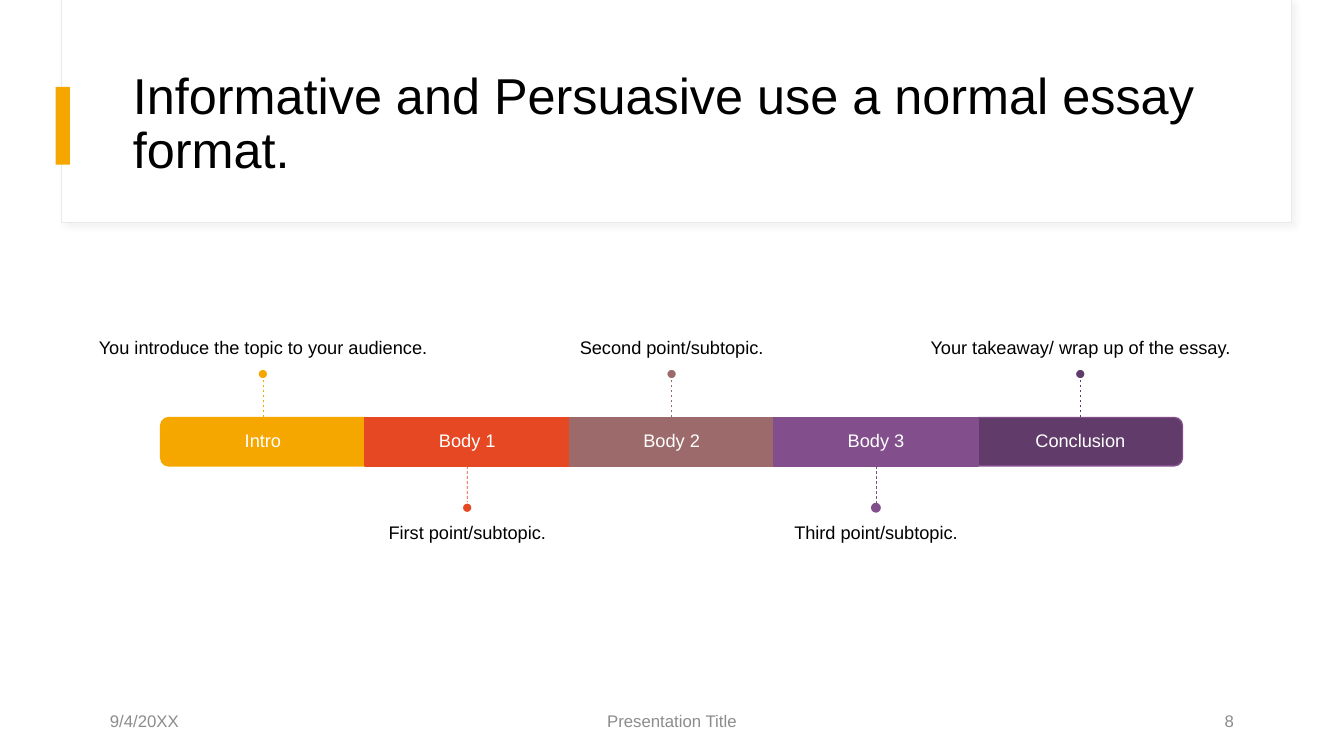
from lxml.etree import SubElement
from pptx import Presentation
from pptx.dml.color import RGBColor
from pptx.enum.dml import MSO_LINE_DASH_STYLE as Dash
from pptx.enum.shapes import MSO_CONNECTOR as Connector, MSO_SHAPE as Shape
from pptx.enum.text import MSO_ANCHOR as Anchor, MSO_AUTO_SIZE as AutoSize, PP_ALIGN as Align
from pptx.oxml.ns import qn
from pptx.util import Cm, Pt

COLORS = {
    "white": "FFFFFF", "black": "000000", "gray": "8C8C8C",
    "frame": "E9E9E9", "shadow": "D9D9D9",
    "amber": "F5A700", "red": "E64823", "rose": "9C6A6A",
    "violet": "824F8C", "plum": "613B69",
}
STEPS = [
    ("Intro", "You introduce the topic to your audience.", "amber", "amber", "white"),
    ("Body 1", "First point/subtopic.", "red", "red", "white"),
    ("Body 2", "Second point/subtopic.", "rose", "rose", "white"),
    ("Body 3", "Third point/subtopic.", "violet", "violet", None),
    ("Conclusion", "Your takeaway/ wrap up of the essay.", "plum", "violet", "white"),
]
BAR_LEFT, BAR_TOP, STEP_WIDTH, BAR_HEIGHT = 4.05, 10.52, 5.15, 1.22
DOT_SIZE, CAPTION_WIDTH, CAPTION_HEIGHT = 0.25, 8.58, 4.24
UPPER_DOT, LOWER_DOT = 9.3, 12.67


def write_text(frame, text, size=13, color="black", align=Align.CENTER,
               anchor=Anchor.MIDDLE, spacing=0.9, insets=(0.25, 0.13, 0.25, 0.13)):
    frame.word_wrap = True
    frame.auto_size = AutoSize.NONE
    frame.vertical_anchor = anchor
    (frame.margin_left, frame.margin_top,
     frame.margin_right, frame.margin_bottom) = map(Cm, insets)
    para = frame.paragraphs[0]
    para.alignment = align
    para.line_spacing = spacing
    span = para.add_run()
    span.text = text
    span.font.name = "Arial"
    span.font.size = Pt(size)
    span.font.color.rgb = RGBColor.from_string(COLORS[color])


class SlideBuilder:
    def __init__(self, page):
        self.page = page

    def shape(self, kind, left, top, width, height, fill, line=None, weight=1, rotation=0):
        item = self.page.shapes.add_shape(kind, Cm(left), Cm(top), Cm(width), Cm(height))
        item.shadow.inherit = False
        item.rotation = rotation
        item.fill.solid()
        item.fill.fore_color.rgb = RGBColor.from_string(COLORS[fill])
        if line:
            item.line.color.rgb = RGBColor.from_string(COLORS[line])
            item.line.width = Pt(weight)
        else:
            item.line.fill.background()
        return item

    def frame(self, left, top, width, height):
        item = self.shape(Shape.RECTANGLE, left, top, width, height, "white", "frame", 0.75)
        effects = item.element.spPr.find(qn("a:effectLst"))
        shadow = SubElement(effects, qn("a:outerShdw"), blurRad=str(Pt(4)),
                            dist=str(Pt(3)), dir="2700000", algn="tl", rotWithShape="0")
        tint = SubElement(shadow, qn("a:srgbClr"), val=COLORS["shadow"])
        SubElement(tint, qn("a:alpha"), val="30000")

    def title(self, text, left, top, width, height):
        box = self.page.shapes.title
        box.left, box.top, box.width, box.height = map(Cm, (left, top, width, height))
        self.page.shapes.element.append(box.element)
        write_text(box.text_frame, text, size=36, align=Align.LEFT)

    def text(self, text, left, top, width, height, **style):
        box = self.page.shapes.add_textbox(Cm(left), Cm(top), Cm(width), Cm(height))
        write_text(box.text_frame, text, **style)

    def leader(self, x, start, end, color):
        line = self.page.shapes.add_connector(
            Connector.STRAIGHT, Cm(x), Cm(start), Cm(x), Cm(end))
        line.line.color.rgb = RGBColor.from_string(COLORS[color])
        line.line.width = Pt(0.5)
        line.line.dash_style = Dash.DASH
        SubElement(line.element.spPr, qn("a:effectLst"))
        return line

    def segment(self, index, label, color, outline):
        left = BAR_LEFT + index * STEP_WIDTH
        if index in (0, len(STEPS) - 1):
            shift = (STEP_WIDTH - BAR_HEIGHT) / 2
            block = self.shape(Shape.ROUND_2_SAME_RECTANGLE, left + shift, BAR_TOP - shift,
                               BAR_HEIGHT, STEP_WIDTH, color, outline,
                               rotation=90 if index else 270)
        else:
            block = self.shape(Shape.RECTANGLE, left, BAR_TOP, STEP_WIDTH, BAR_HEIGHT,
                               color, outline)
        self.text(label, left, BAR_TOP, STEP_WIDTH, BAR_HEIGHT, color="white",
                  insets=(0.28,) * 4)
        return block

    def step(self, index, label, caption, color, outline, dot_line):
        block = self.segment(index, label, color, outline)
        center = BAR_LEFT + (index + 0.5) * STEP_WIDTH
        above = index % 2 == 0
        if above:
            dot_top, start, end = UPPER_DOT, BAR_TOP, UPPER_DOT + DOT_SIZE
            caption_top, anchor, insets = 5.08, Anchor.BOTTOM, (0, 0, 0, 0.28)
        else:
            dot_top, start, end = LOWER_DOT, BAR_TOP + BAR_HEIGHT, LOWER_DOT
            caption_top, anchor, insets = 12.93, Anchor.TOP, (0, 0.28, 0, 0)
        self.text(caption, center - CAPTION_WIDTH / 2, caption_top, CAPTION_WIDTH,
                  CAPTION_HEIGHT, anchor=anchor, insets=insets)
        line = self.leader(center, start, end, color)
        if block.auto_shape_type == Shape.RECTANGLE:
            line.begin_connect(block, 0 if above else 2)
        self.shape(Shape.OVAL, center - DOT_SIZE / 2, dot_top, DOT_SIZE, DOT_SIZE,
                   color, dot_line)


def main():
    deck = Presentation()
    deck.slide_width, deck.slide_height = Cm(33.87), Cm(19.05)
    slide = SlideBuilder(deck.slides.add_slide(deck.slide_layouts[5]))

    slide.frame(1.55, 0, 31.01, 5.62)
    slide.shape(Shape.RECTANGLE, 1.4, 2.19, 0.36, 1.96, "amber")
    slide.title("Informative and Persuasive use a normal essay format.", 3.1, 1.52, 28.24, 3.28)

    for index, details in enumerate(STEPS):
        slide.step(index, *details)

    for text, left, width, align in [
        ("9/4/20XX", 2.52, 7.62, Align.LEFT),
        ("Presentation Title", 11.22, 11.43, Align.CENTER),
        ("8", 23.73, 7.62, Align.RIGHT),
    ]:
        slide.text(text, left, 17.65, width, 1.01, size=12, color="gray",
                   align=align, spacing=1.0)

    deck.save("out.pptx")


if __name__ == "__main__":
    main()
